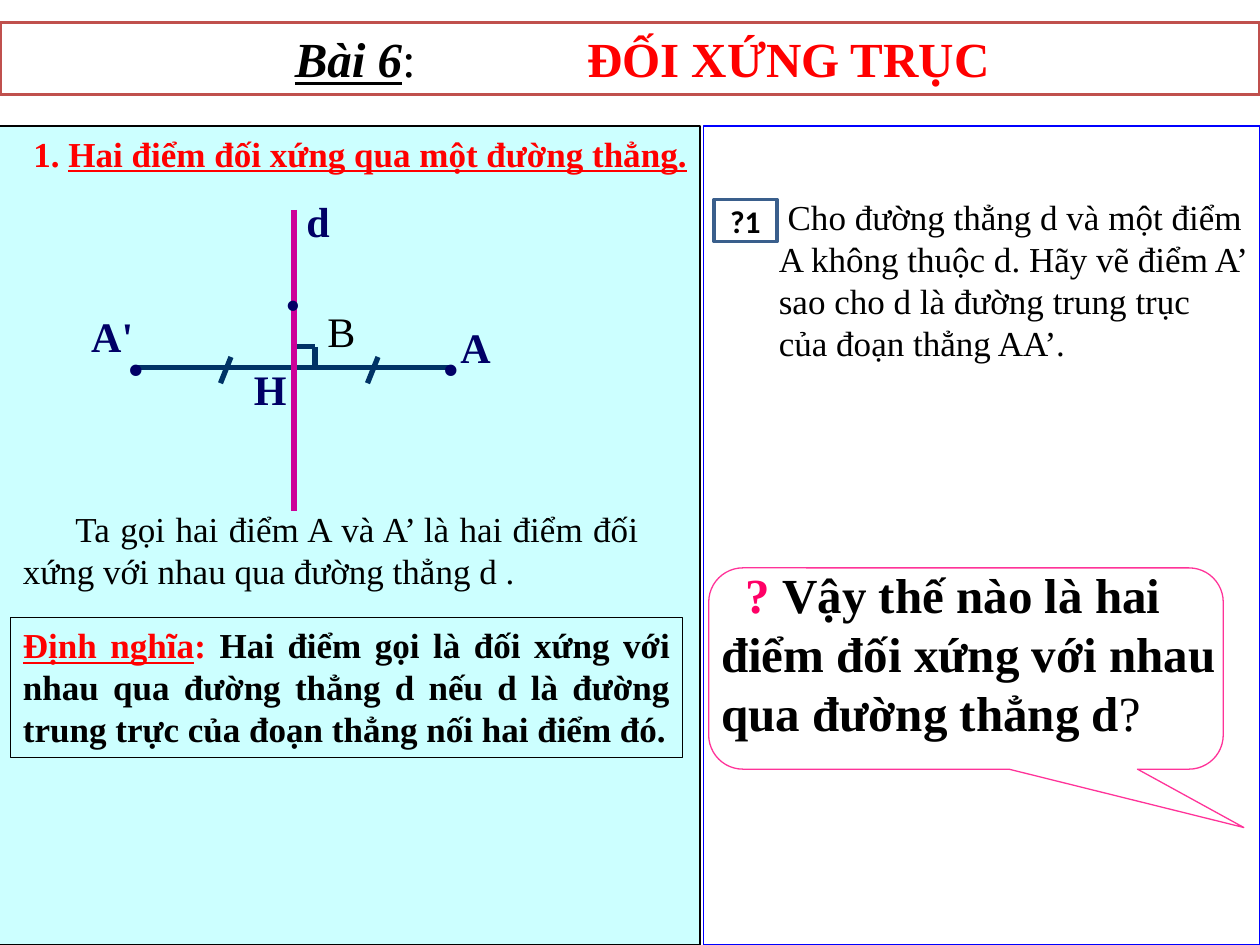
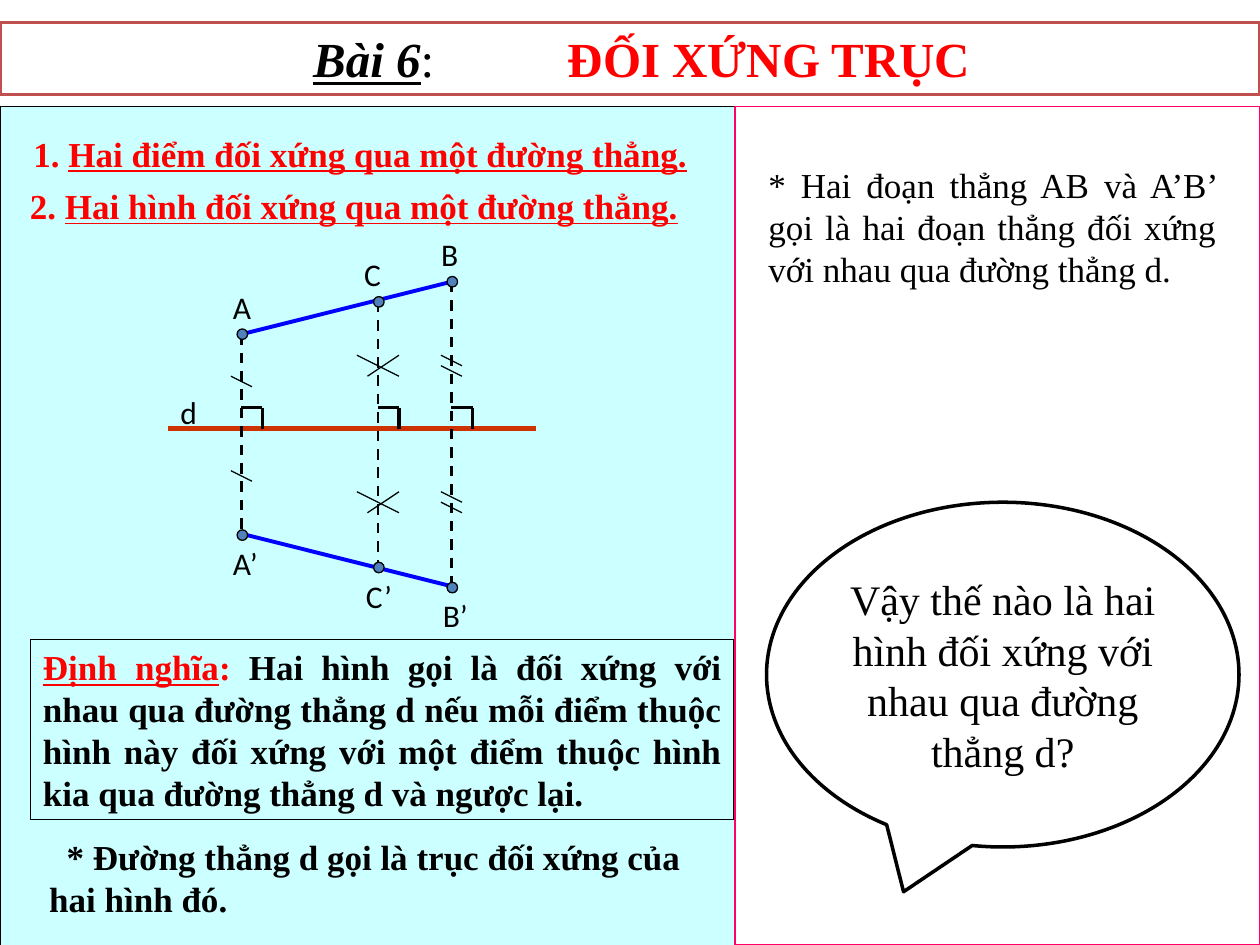
from dataclasses import dataclass
from typing import NamedTuple, Optional

import pptx
import pptx.dml.color
import pptx.enum.dml
import pptx.enum.shapes
import pptx.enum.text
import pptx.oxml.ns
import pptx.presentation
import pptx.slide
import pptx.util
from lxml import etree

Pt = pptx.util.Pt
Geometry = pptx.enum.shapes.MSO_SHAPE
Align = pptx.enum.text.PP_ALIGN
Anchor = pptx.enum.text.MSO_ANCHOR

COLORS = {
    "black": "000000",
    "white": "FFFFFF",
    "red": "FF0000",
    "blue": "0000FF",
    "navy": "000066",
    "teal": "003366",
    "magenta": "CC0099",
    "cyan": "CCFFFF",
    "pink": "FF3399",
    "rose": "FF0066",
    "brick": "C0504D",
    "rust": "CC3300",
    "steel": "3A5F8C",
    "dot": "4F81BD",
}
SERIF = "Times New Roman"
SANS = "Calibri"
DEFINITION_HEAD = "Định nghĩa"


class Box(NamedTuple):
    left: float
    top: float
    width: float
    height: float


class Piece(NamedTuple):
    text: str
    color: Optional[str] = None
    bold: Optional[bool] = None
    italic: Optional[bool] = None
    underline: Optional[bool] = None


@dataclass(frozen=True)
class Passage:
    pieces: tuple[Piece, ...]
    size: float = 20
    font: str = SERIF
    color: str = "black"
    bold: bool = False
    align: Align = Align.LEFT
    anchor: Anchor = Anchor.TOP
    indent: float = 0
    inset: float = 7.2
    tab: float = 0


@dataclass(frozen=True)
class Panel:
    box: Box
    line: str
    fill: Optional[str] = None
    weight: float = 0.75
    geometry: Geometry = Geometry.RECTANGLE
    adjustments: tuple[float, ...] = ()


class Stroke(NamedTuple):
    x1: float
    y1: float
    x2: float
    y2: float
    color: str = "black"
    weight: float = 0.75
    dashed: bool = False


class Label(NamedTuple):
    text: str
    box: Box
    size: float = 24
    color: str = "navy"
    bold: bool = True
    font: str = SERIF


class MirroredPoint(NamedTuple):
    x: float
    top: float
    bottom: float
    ticks: tuple[tuple[float, float, float, float], ...]
    tick_shift: float


def rgb(name: str) -> pptx.dml.color.RGBColor:
    return pptx.dml.color.RGBColor.from_string(COLORS[name])


def write(frame, passage: Passage) -> None:
    frame.word_wrap = True
    frame.vertical_anchor = passage.anchor
    frame.margin_left = Pt(passage.inset)
    paragraph = frame.paragraphs[0]
    paragraph.alignment = passage.align
    paragraph.font.name = passage.font
    paragraph.font.size = Pt(passage.size)
    paragraph.font.bold = passage.bold
    paragraph.font.color.rgb = rgb(passage.color)
    properties = paragraph._p.get_or_add_pPr()
    if passage.indent:
        properties.set("indent", str(Pt(passage.indent)))
    if passage.tab:
        stops = etree.Element(pptx.oxml.ns.qn("a:tabLst"))
        etree.SubElement(stops, pptx.oxml.ns.qn("a:tab"), pos=str(Pt(passage.tab)), algn="l")
        properties.insert(0, stops)
    for piece in passage.pieces:
        run = paragraph.add_run()
        run.text = piece.text
        if piece.color:
            run.font.color.rgb = rgb(piece.color)
        run.font.bold = piece.bold
        run.font.italic = piece.italic
        run.font.underline = piece.underline


def add_text(slide: pptx.slide.Slide, box: Box, passage: Passage) -> None:
    write(slide.shapes.add_textbox(*map(Pt, box)).text_frame, passage)


def add_panel(slide: pptx.slide.Slide, panel: Panel, passage: Optional[Passage] = None) -> None:
    shape = slide.shapes.add_shape(panel.geometry, *map(Pt, panel.box))
    shape.shadow.inherit = False
    for index, value in enumerate(panel.adjustments):
        shape.adjustments[index] = value
    if panel.fill:
        shape.fill.solid()
        shape.fill.fore_color.rgb = rgb(panel.fill)
    else:
        shape.fill.background()
    shape.line.color.rgb = rgb(panel.line)
    shape.line.width = Pt(panel.weight)
    if passage:
        write(shape.text_frame, passage)


def add_stroke(slide: pptx.slide.Slide, stroke: Stroke) -> None:
    connector = slide.shapes.add_connector(
        pptx.enum.shapes.MSO_CONNECTOR.STRAIGHT, *map(Pt, stroke[:4])
    )
    connector.line.color.rgb = rgb(stroke.color)
    connector.line.width = Pt(stroke.weight)
    if stroke.dashed:
        connector.line.dash_style = pptx.enum.dml.MSO_LINE.DASH
    etree.SubElement(connector._element.spPr, pptx.oxml.ns.qn("a:effectLst"))


def add_label(slide: pptx.slide.Slide, label: Label) -> None:
    add_text(slide, label.box, Passage(
        (Piece(label.text),), label.size, label.font, label.color, label.bold))


def add_right_angle(
    slide: pptx.slide.Slide, x: float, axis: float, color: str, weight: float
) -> None:
    add_stroke(slide, Stroke(x, axis - 12, x + 12, axis - 12, color, weight))
    add_stroke(slide, Stroke(x + 12, axis - 12, x + 12, axis, color, weight))


def add_title(slide: pptx.slide.Slide, start: float, topic_start: float) -> None:
    add_panel(
        slide,
        Panel(Box(0, 13, 720, 41), "brick", "white", 2),
        Passage(
            (
                Piece("Bài 6", italic=True, underline=True),
                Piece(":\t", bold=False),
                Piece("ĐỐI XỨNG TRỤC", "red"),
            ),
            size=28, bold=True, inset=start, tab=topic_start - start,
        ),
    )


def add_heading(
    slide: pptx.slide.Slide, box: Box, number: str, heading: str, indent: float = 0
) -> None:
    add_text(slide, box, Passage(
        (Piece(number), Piece(heading, underline=True)),
        color="red", bold=True, indent=indent))


def add_first_heading(slide: pptx.slide.Slide) -> None:
    add_heading(slide, Box(12, 72, 402, 31), "1. ", "Hai điểm đối xứng qua một đường thẳng.")


def add_definition(slide: pptx.slide.Slide, box: Box, statement: str) -> None:
    add_panel(slide, Panel(box, "black"), Passage(
        (Piece(DEFINITION_HEAD, "red", underline=True), Piece(": ", "red"), Piece(statement)),
        bold=True, align=Align.JUSTIFY))


def build_symmetric_points(slide: pptx.slide.Slide) -> None:
    add_panel(slide, Panel(Box(-2, 72, 402, 468), "black", "cyan"))
    add_panel(slide, Panel(Box(402, 72, 318, 468), "blue", "white"))
    add_text(slide, Box(6, 286.5, 366, 55.5), Passage(
        (Piece("Ta gọi hai điểm A và A’ là hai điểm đối xứng với nhau qua đường thẳng d ."),),
        align=Align.JUSTIFY, indent=30))
    add_panel(slide, Panel(Box(405, 324.5, 294, 115), "pink", "white",
                           geometry=Geometry.ROUNDED_RECTANGULAR_CALLOUT,
                           adjustments=(0.54, 0.79, 0.17)))
    add_text(slide, Box(405, 319, 300, 109), Passage(
        (
            Piece("? ", "rose", bold=True),
            Piece("Vậy thế nào là hai điểm đối xứng với nhau qua đường thẳng d", bold=True),
            Piece("?"),
        ),
        size=28, indent=14))
    add_definition(
        slide, Box(6, 353, 384, 80),
        "Hai điểm gọi là đối xứng với nhau qua đường thẳng d nếu d là đường trung trực "
        "của đoạn thẳng nối hai điểm đó.")
    add_panel(slide, Panel(Box(408, 114, 36, 24), "steel", weight=2), Passage(
        (Piece("?1"),), 18, SANS, bold=True, align=Align.CENTER, anchor=Anchor.MIDDLE))
    add_text(slide, Box(438, 108, 282, 104), Passage(
        (Piece("Cho đường thẳng d và một điểm A không thuộc d. Hãy vẽ điểm A’ "
               "sao cho d là đường trung trục của đoạn thẳng AA’."),),
        indent=5))

    axis, foot, reach = 168, 210, 90
    add_stroke(slide, Stroke(axis - reach, foot, axis + reach, foot, "teal", 3))
    add_right_angle(slide, axis, foot + 0.2, "teal", 3)
    for x in (axis - 42, axis + 42):
        add_stroke(slide, Stroke(x + 6, 204, x, 219, "teal", 3))
    add_stroke(slide, Stroke(axis, 120, axis, 292, "magenta", 3))
    for label in (
        Label("d", Box(168, 108, 24, 36)),
        Label("H", Box(138, 204, 36, 36)),
        Label("A", Box(256, 180, 32, 36)),
        Label("A'", Box(45, 174, 40, 36)),
        Label("B", Box(180, 171, 31, 36), color="black", bold=False),
        Label(".", Box(246, 171, 30, 55), 40),
        Label(".", Box(66, 171, 30, 55), 40),
        Label(".", Box(156, 138, 24, 51), 36),
    ):
        add_label(slide, label)
    add_title(slide, 168.5, 335.5)
    add_first_heading(slide)


def build_symmetric_figures(slide: pptx.slide.Slide) -> None:
    add_panel(slide, Panel(Box(0, 61, 420, 492), "black", "cyan"))
    add_definition(
        slide, Box(17.5, 365.5, 402, 103),
        "Hai hình gọi là đối xứng với nhau qua đường thẳng d nếu mỗi điểm thuộc hình này "
        "đối xứng với một điểm thuộc hình kia qua đường thẳng d và ngược lại.")
    add_text(slide, Box(21, 474, 384, 55.5), Passage(
        (Piece("* Đường thẳng d gọi là trục đối xứng của hai hình đó."),),
        bold=True, indent=10))
    add_panel(slide, Panel(Box(420, 61, 300, 479), "rose", "white"))

    axis = 245
    a = MirroredPoint(138, 191, 305, ((-6, 215, 6, 221),), 54)
    b = MirroredPoint(258, 161, 335, ((-6, 203, 6, 209), (-6, 209, 6, 215)), 78)
    c = MirroredPoint(216, 172.5, 323.5, ((-12, 203, 12, 215), (12, 203, -6, 215)), 78)
    add_stroke(slide, Stroke(96, axis, 306, axis, "rust", 3))
    add_stroke(slide, Stroke(a.x, a.top, b.x, b.top, "blue", 2.25))
    add_stroke(slide, Stroke(a.x, a.bottom, b.x, b.bottom, "blue", 2.25))
    for point in (a, b, c):
        add_stroke(slide, Stroke(point.x, point.top, point.x, point.bottom, weight=1.5, dashed=True))
        for x1, y1, x2, y2 in point.ticks:
            for shift in (0, point.tick_shift):
                add_stroke(slide, Stroke(point.x + x1, y1 + shift, point.x + x2, y2 + shift))
        add_right_angle(slide, point.x, axis, "black", 2)
        for y in (point.top, point.bottom + 0.8):
            add_panel(slide, Panel(Box(point.x - 2.5, y - 3, 6, 6), "black", "dot",
                                   geometry=Geometry.OVAL))
    for name, left, top in (
        ("A", 126, 161), ("B", 245, 131), ("C", 201, 142), ("d", 96, 221),
        ("A’", 126, 307.5), ("B’", 246, 337), ("C’", 202, 326),
    ):
        width = 30 if len(name) == 1 else 48
        add_label(slide, Label(name, Box(left, top, width, 29), 18, "black", False, SANS))

    add_text(slide, Box(432, 90, 270, 79), Passage(
        (Piece("* Hai đoạn thẳng AB và A’B’ gọi là hai đoạn thẳng đối xứng với nhau "
               "qua đường thẳng d."),),
        align=Align.JUSTIFY))
    add_panel(
        slide,
        Panel(Box(438, 287, 270, 197), "black", "white", 2, Geometry.OVAL_CALLOUT, (-0.21, 0.63)),
        Passage(
            (Piece("Vậy thế nào là hai hình đối xứng với nhau qua đường thẳng d?"),),
            size=24, align=Align.CENTER, anchor=Anchor.MIDDLE))
    add_title(slide, 179, 324.5)
    add_first_heading(slide)
    add_heading(slide, Box(0, 102, 432, 31), "2. ",
                "Hai hình đối xứng qua một đường thẳng.", indent=10)


def main() -> None:
    deck = pptx.Presentation()
    deck.slide_width, deck.slide_height = Pt(720), Pt(540)
    for build in (build_symmetric_points, build_symmetric_figures):
        build(deck.slides.add_slide(deck.slide_layouts[6]))
    deck.save("out.pptx")


if __name__ == "__main__":
    main()
